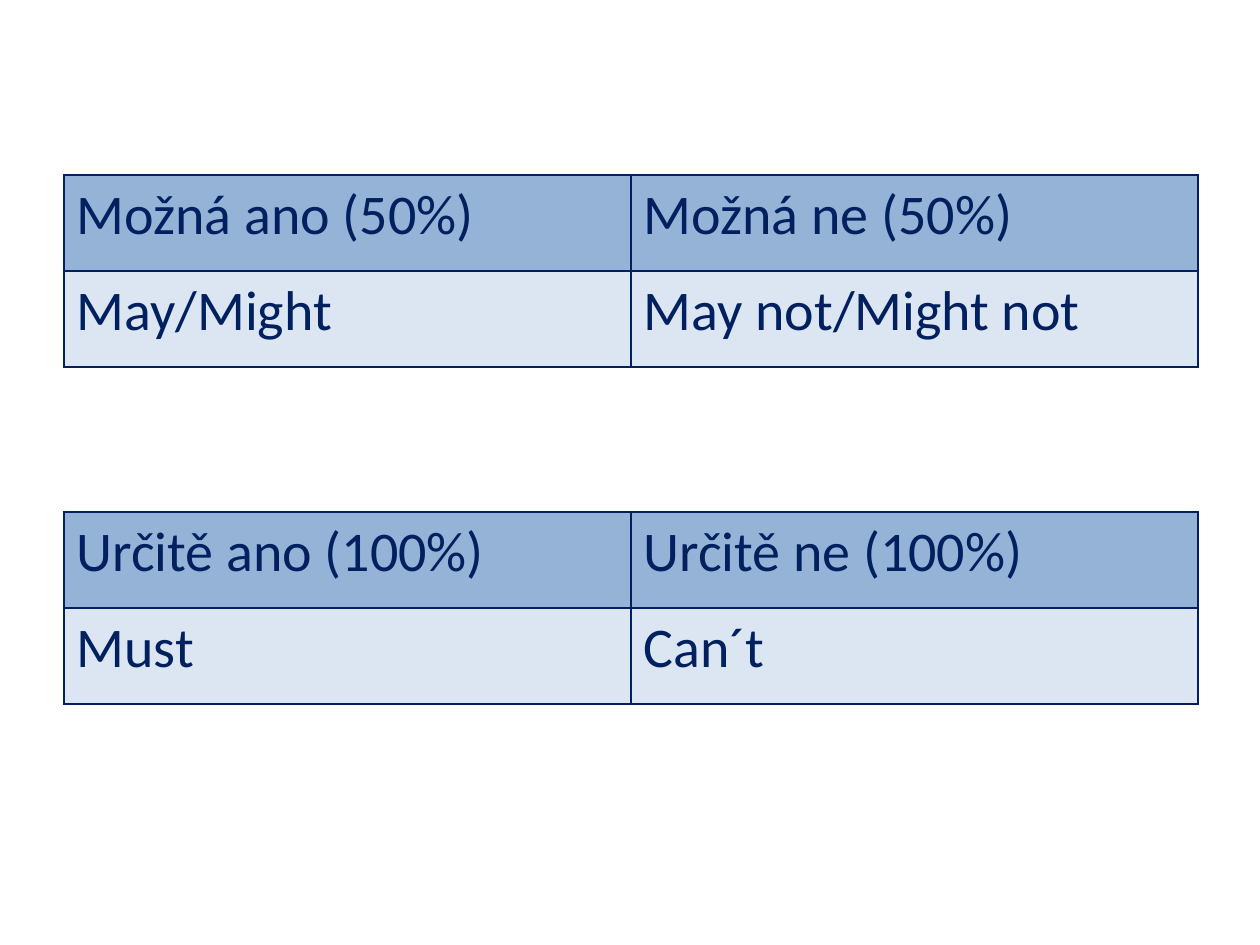
from lxml.etree import SubElement
from pptx import Presentation
from pptx.dml.color import RGBColor as Rgb
from pptx.oxml.ns import qn
from pptx.util import Emu, Pt

COLORS = {"ink": "002060", "header": "95B3D7", "body": "DCE6F2"}
FONT = "Calibri"
PX_PER_INCH = 126


def px(count):
    return Emu(round(count * 914400 / PX_PER_INCH))


def write_text(frame, text, *, size=32, color="ink", font=FONT):
    span = frame.paragraphs[0].add_run()
    span.text = text
    span.font.size = Pt(size)
    span.font.name = font
    span.font.color.rgb = Rgb.from_string(COLORS[color])


class SlideBuilder:
    """Holds the table style and the current slide."""

    border_color = "ink"
    border_width = Pt(1)
    row_fills = ("header", "body")

    def __init__(self, page):
        self.page = page

    def border(self, cell):
        properties = cell._tc.get_or_add_tcPr()
        for side in ("lnL", "lnR", "lnT", "lnB"):
            line = SubElement(properties, qn(f"a:{side}"), w=str(self.border_width))
            fill = SubElement(line, qn("a:solidFill"))
            SubElement(fill, qn("a:srgbClr"), val=COLORS[self.border_color])

    def table(self, rows, left, top, column_width, row_height):
        column_count = len(rows[0])
        table = self.page.shapes.add_table(
            len(rows), column_count, px(left), px(top),
            px(column_width * column_count), px(row_height * len(rows)),
        ).table
        for column in table.columns:
            column.width = px(column_width)
        for row, texts, fill in zip(table.rows, rows, self.row_fills):
            row.height = px(row_height)
            for cell, text in zip(row.cells, texts):
                self.border(cell)
                cell.fill.solid()
                cell.fill.fore_color.rgb = Rgb.from_string(COLORS[fill])
                write_text(cell.text_frame, text)


def main():
    deck = Presentation()
    deck.slide_width, deck.slide_height = px(1260), px(945)
    builder = SlideBuilder(deck.slides.add_slide(deck.slide_layouts[6]))

    # Modal verbs by degree of certainty: top position and rows
    certainty_tables = (
        (512, [("Určitě ano (100%)", "Určitě ne (100%)"),
               ("Must", "Can´t")]),
        (175, [("Možná ano (50%)", "Možná ne (50%)"),
               ("May/Might", "May not/Might not")]),
    )
    for top, rows in certainty_tables:
        builder.table(rows, left=64, top=top, column_width=567, row_height=96)

    deck.save("out.pptx")


if __name__ == "__main__":
    main()
